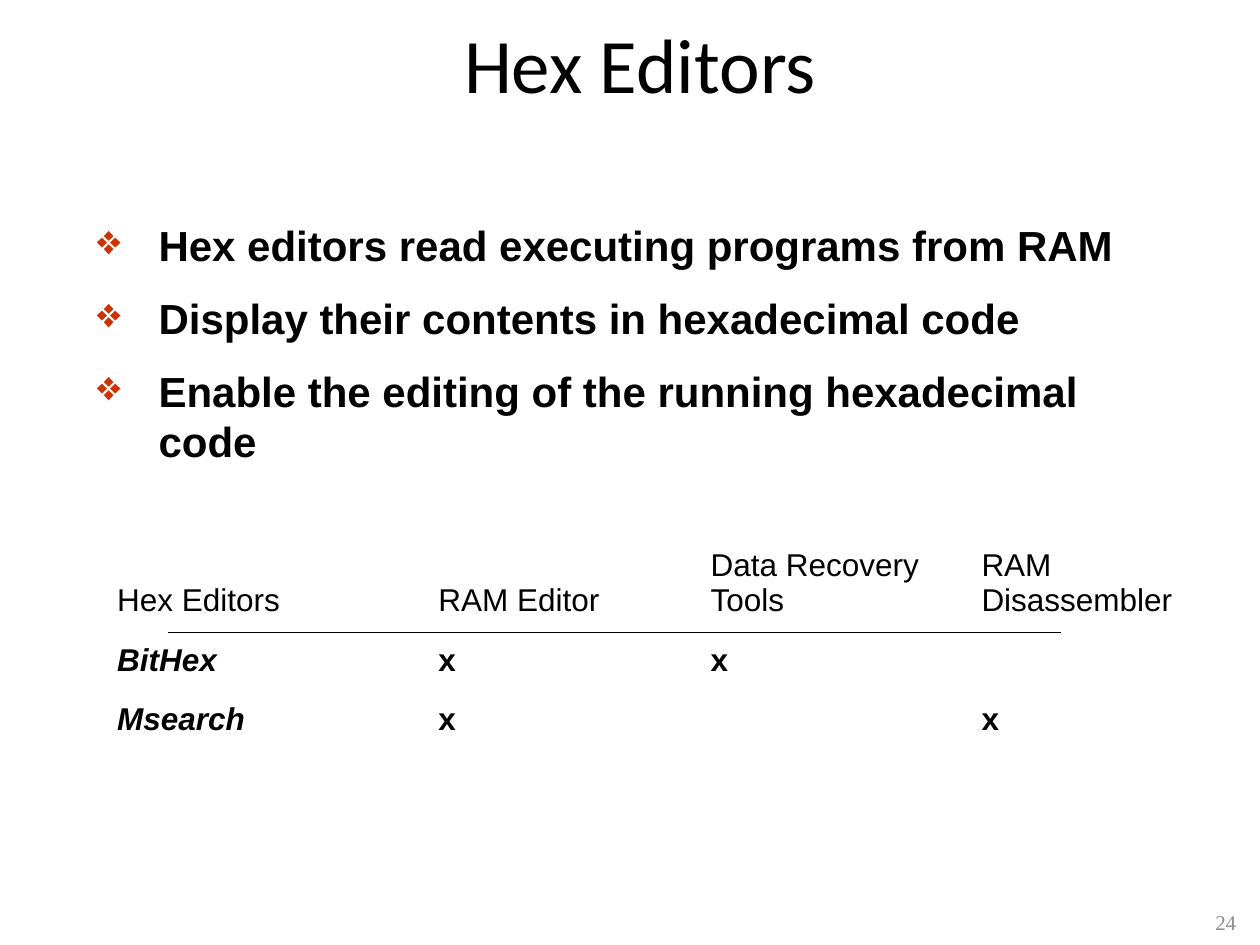
from dataclasses import dataclass

from lxml.etree import SubElement
from pptx import Presentation
from pptx.dml.color import RGBColor
from pptx.enum.shapes import MSO_CONNECTOR
from pptx.enum.text import MSO_ANCHOR, PP_ALIGN
from pptx.oxml.ns import qn
from pptx.util import Inches, Pt


@dataclass(frozen=True)
class Theme:
    """Colours, typefaces and type sizes."""

    ink: str = "000000"
    accent: str = "CC3300"
    muted: str = "8C8C8C"
    title_font: str = "Calibri"
    body_font: str = "Arial"
    number_font: str = "Times New Roman"
    title_size: int = 44
    body_size: int = 24
    table_size: int = 18
    number_size: int = 12


class SlideBuilder:
    """Adds styled elements to the current slide."""

    def __init__(self, slide, theme):
        self.slide = slide
        self.theme = theme

    def style(self, paragraph, name, size, color=None, bold=False, italic=False):
        """Format every run of a paragraph."""
        for span in paragraph.runs:
            span.font.name = name
            span.font.size = Pt(size)
            span.font.bold = bold
            span.font.italic = italic
            span.font.color.rgb = RGBColor.from_string(color or self.theme.ink)

    def place(self, box, left, top, width, height):
        """Set the position and size of a shape."""
        box.left, box.top = Inches(left), Inches(top)
        box.width, box.height = Inches(width), Inches(height)

    def title(self, text, *bounds):
        """Fill and move the title placeholder."""
        box = self.slide.shapes.title
        self.place(box, *bounds)
        frame = box.text_frame
        frame.text = text
        frame.vertical_anchor = MSO_ANCHOR.MIDDLE
        para = frame.paragraphs[0]
        para.alignment = PP_ALIGN.CENTER
        self.style(para, self.theme.title_font, self.theme.title_size)

    def text_frame(self, text, *bounds):
        """Add a wrapping text box and return its frame."""
        box = self.slide.shapes.add_textbox(*map(Inches, bounds))
        frame = box.text_frame
        frame.word_wrap = True
        frame.text = text
        return frame

    def bullets(self, items, *bounds):
        """Add a list with coloured diamond bullets."""
        frame = self.text_frame("\n".join(items), *bounds)
        for index, para in enumerate(frame.paragraphs):
            properties = para._p.get_or_add_pPr()
            properties.set("marL", str(Inches(0.49)))
            properties.set("indent", str(-Inches(0.49)))
            color = SubElement(properties, qn("a:buClr"))
            SubElement(color, qn("a:srgbClr"), val=self.theme.accent)
            SubElement(properties, qn("a:buChar"), char="❖")
            para.space_before = Pt(13 if index else 0)
            self.style(para, self.theme.body_font, self.theme.body_size, bold=True)

    def table(self, rows, widths, heights, left, top):
        """Add an unfilled table with bottom-anchored text."""
        bounds = map(Inches, (left, top, sum(widths), sum(heights)))
        table = self.slide.shapes.add_table(len(rows), len(widths), *bounds).table
        table.first_row = table.horz_banding = False
        for column, width in zip(table.columns, widths):
            column.width = Inches(width)
        for row, height in zip(table.rows, heights):
            row.height = Inches(height)
        for row_index, values in enumerate(rows):
            for column_index, value in enumerate(values):
                cell = table.cell(row_index, column_index)
                cell.fill.background()
                cell.vertical_anchor = MSO_ANCHOR.BOTTOM
                cell.text_frame.text = value
                is_body = row_index > 0
                for para in cell.text_frame.paragraphs:
                    self.style(para, self.theme.body_font, self.theme.table_size,
                               bold=is_body, italic=is_body and column_index == 0)

    def rule(self, left, right, top):
        """Add a thin horizontal line."""
        line = self.slide.shapes.add_connector(
            MSO_CONNECTOR.STRAIGHT, Inches(left), Inches(top), Inches(right), Inches(top))
        line.line.color.rgb = RGBColor.from_string(self.theme.ink)
        line.line.width = Pt(0.75)
        SubElement(line._element.spPr, qn("a:effectLst"))

    def page_number(self, number, *bounds):
        """Add the right-aligned page number."""
        frame = self.text_frame(str(number), *bounds)
        frame.vertical_anchor = MSO_ANCHOR.MIDDLE
        para = frame.paragraphs[0]
        para.alignment = PP_ALIGN.RIGHT
        self.style(para, self.theme.number_font, self.theme.number_size, self.theme.muted)


def main():
    """Build and save the deck."""
    deck = Presentation()
    deck.slide_width, deck.slide_height = Inches(10), Inches(7.5)
    page = SlideBuilder(deck.slides.add_slide(deck.slide_layouts[5]), Theme())
    page.page_number(24, 7.58, 7.12, 2.33, 0.4)
    page.title("Hex Editors", 0.83, 0.08, 8.5, 0.83)
    page.bullets([
        "Hex editors read executing programs from RAM",
        "Display their contents in hexadecimal code",
        "Enable the editing of the running hexadecimal code",
    ], 0.67, 1.69, 8.33, 2.1)
    page.table([
        ["Hex Editors", "RAM Editor", "Data Recovery Tools", "RAM\nDisassembler"],
        ["BitHex", "x", "x", ""],
        ["Msearch", "x", "", "x"],
    ], [2.55, 2.16, 2.15, 2.16], [0.79, 0.47, 0.47], 0.83, 4.17)
    page.rule(1.33, 8.42, 5.02)
    deck.save("out.pptx")


if __name__ == "__main__":
    main()
